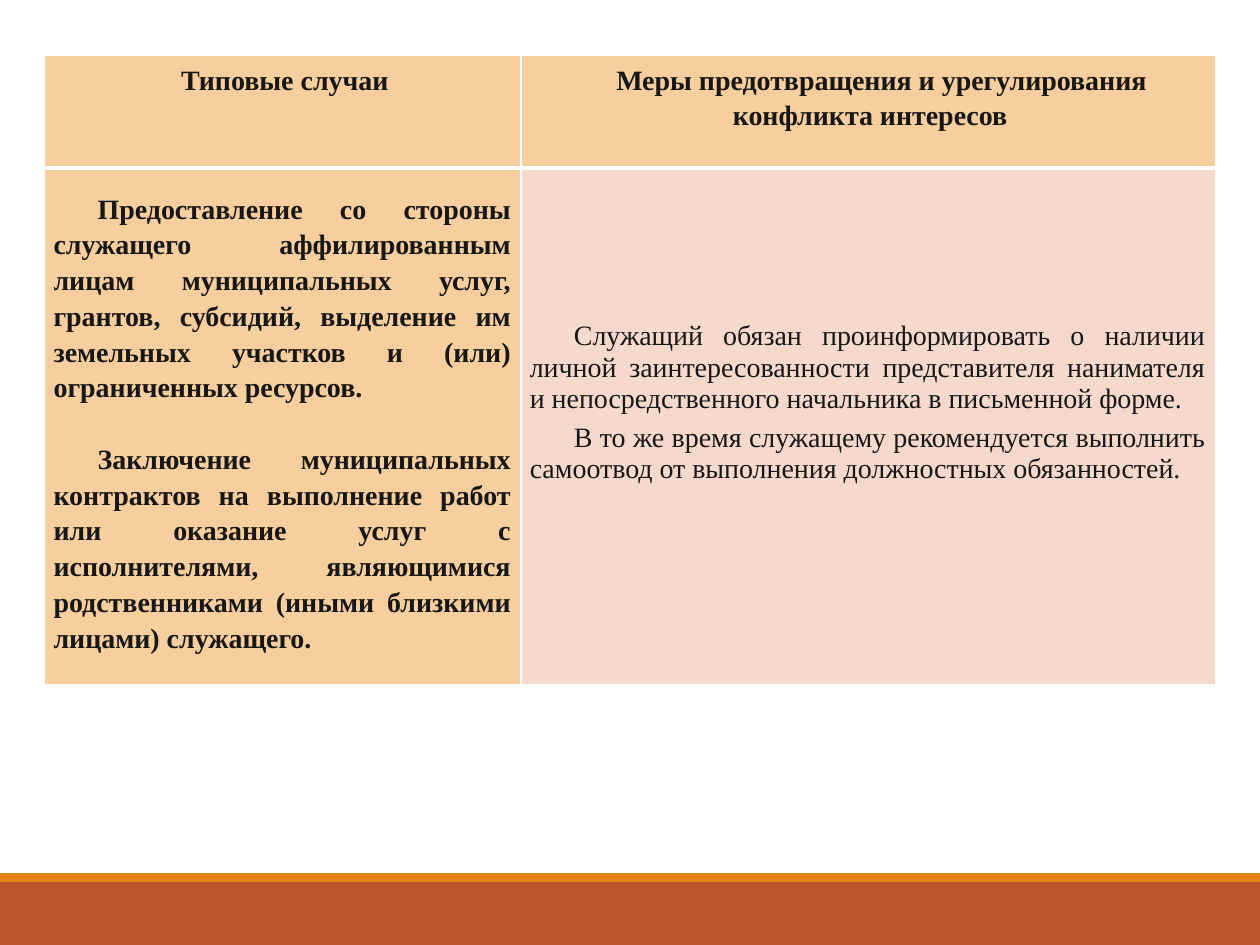
from dataclasses import dataclass

from lxml import etree
from pptx import Presentation
from pptx import util as u
from pptx.dml.color import RGBColor
from pptx.enum import shapes, text
from pptx.oxml import ns


@dataclass(frozen=True)
class Theme:
    font: str = "Times New Roman"
    size: float = 16
    ink: str = "181717"
    border: str = "FFFFFF"
    sand: str = "F7CE9D"
    rose: str = "F5D9CC"
    rust: str = "BD582C"
    orange: str = "E48312"


@dataclass(frozen=True)
class CellSpec:
    row: int
    column: int
    fill: str
    paragraphs: tuple[str, ...]
    align: text.PP_ALIGN = text.PP_ALIGN.JUSTIFY
    bold: bool = True
    top_margin: float = 0.1
    left_indent: float = 0
    first_indent: float = 0.89
    line_spacing: float = 1.15
    gap: float = 0


@dataclass(frozen=True)
class Band:
    top: float
    height: float
    fill: str


THEME = Theme()
PAGE_WIDTH, PAGE_HEIGHT = 25.4, 19.05
COLUMNS = (9.6, 14)
ROWS = (2.27, 10.42)
BANDS = (
    Band(17.78, 1.27, THEME.rust),
    Band(17.6, 0.18, THEME.orange),
)
CELLS = (
    CellSpec(0, 0, THEME.sand, ("Типовые случаи",), text.PP_ALIGN.CENTER,
             left_indent=0.1, first_indent=0),
    CellSpec(0, 1, THEME.sand,
             ("Меры предотвращения и урегулирования конфликта интересов",),
             text.PP_ALIGN.CENTER, left_indent=0.1, first_indent=0.46),
    CellSpec(1, 0, THEME.sand, (
        "Предоставление со стороны служащего аффилированным лицам муниципальных "
        "услуг, грантов, субсидий, выделение им земельных участков и (или) "
        "ограниченных ресурсов.",
        "Заключение муниципальных контрактов на выполнение работ или оказание "
        "услуг с исполнителями, являющимися родственниками (иными близкими "
        "лицами) служащего.",
    ), top_margin=0.43, gap=20.4),
    CellSpec(1, 1, THEME.rose, (
        "Служащий обязан проинформировать о наличии личной заинтересованности "
        "представителя нанимателя и непосредственного начальника в письменной форме.",
        "В то же время служащему рекомендуется выполнить самоотвод от выполнения "
        "должностных обязанностей.",
    ), bold=False, top_margin=3.07, line_spacing=1.01, gap=4.3),
)


def paint(target, color: str) -> None:
    target.fill.solid()
    target.fill.fore_color.rgb = RGBColor.from_string(color)


def add_band(page, band: Band) -> None:
    box = page.shapes.add_shape(
        shapes.MSO_SHAPE.RECTANGLE, 0, u.Cm(band.top), u.Cm(PAGE_WIDTH), u.Cm(band.height))
    box.shadow.inherit = False
    box.line.fill.background()
    paint(box, band.fill)


def add_borders(cell, **widths: float) -> None:
    properties = cell._tc.get_or_add_tcPr()
    for position, (side, width) in enumerate(widths.items()):
        line = etree.Element(ns.qn(f"a:ln{side}"), w=str(u.Pt(width)))
        fill = etree.SubElement(line, ns.qn("a:solidFill"))
        etree.SubElement(fill, ns.qn("a:srgbClr"), val=THEME.border)
        properties.insert(position, line)


def write_paragraph(para, wording: str, *, align, bold: bool, spacing: float,
                    left: float, first: float, before: float) -> None:
    para.alignment = align
    para.line_spacing = spacing
    para.space_before = u.Pt(before)
    properties = para._p.get_or_add_pPr()
    properties.set("marL", str(u.Cm(left)))
    properties.set("indent", str(u.Cm(first)))
    span = para.add_run()
    span.text = wording
    span.font.name = THEME.font
    span.font.size = u.Pt(THEME.size)
    span.font.bold = bold
    span.font.color.rgb = RGBColor.from_string(THEME.ink)


def fill_cell(cell, spec: CellSpec) -> None:
    paint(cell, spec.fill)
    add_borders(cell, L=1, R=1, T=3 if spec.row else 1, B=1 if spec.row else 3)
    cell.margin_left, cell.margin_right = u.Cm(0.18), u.Cm(0.2)
    cell.margin_top, cell.margin_bottom = u.Cm(spec.top_margin), 0
    cell.vertical_anchor = text.MSO_ANCHOR.TOP
    frame = cell.text_frame
    for index, wording in enumerate(spec.paragraphs):
        para = frame.add_paragraph() if index else frame.paragraphs[0]
        write_paragraph(para, wording, align=spec.align, bold=spec.bold,
                        spacing=spec.line_spacing, left=spec.left_indent,
                        first=spec.first_indent, before=spec.gap if index else 0)


def add_cases_table(page) -> None:
    table = page.shapes.add_table(
        len(ROWS), len(COLUMNS), u.Cm(0.9), u.Cm(1.12),
        u.Cm(sum(COLUMNS)), u.Cm(sum(ROWS))).table
    table.horz_banding = False
    for column, width in zip(table.columns, COLUMNS):
        column.width = u.Cm(width)
    for row, height in zip(table.rows, ROWS):
        row.height = u.Cm(height)
    for spec in CELLS:
        fill_cell(table.cell(spec.row, spec.column), spec)


def main() -> None:
    deck = Presentation()
    deck.slide_width, deck.slide_height = u.Cm(PAGE_WIDTH), u.Cm(PAGE_HEIGHT)
    page = deck.slides.add_slide(deck.slide_layouts[6])
    for band in BANDS:
        add_band(page, band)
    add_cases_table(page)
    deck.save("out.pptx")


if __name__ == "__main__":
    main()
